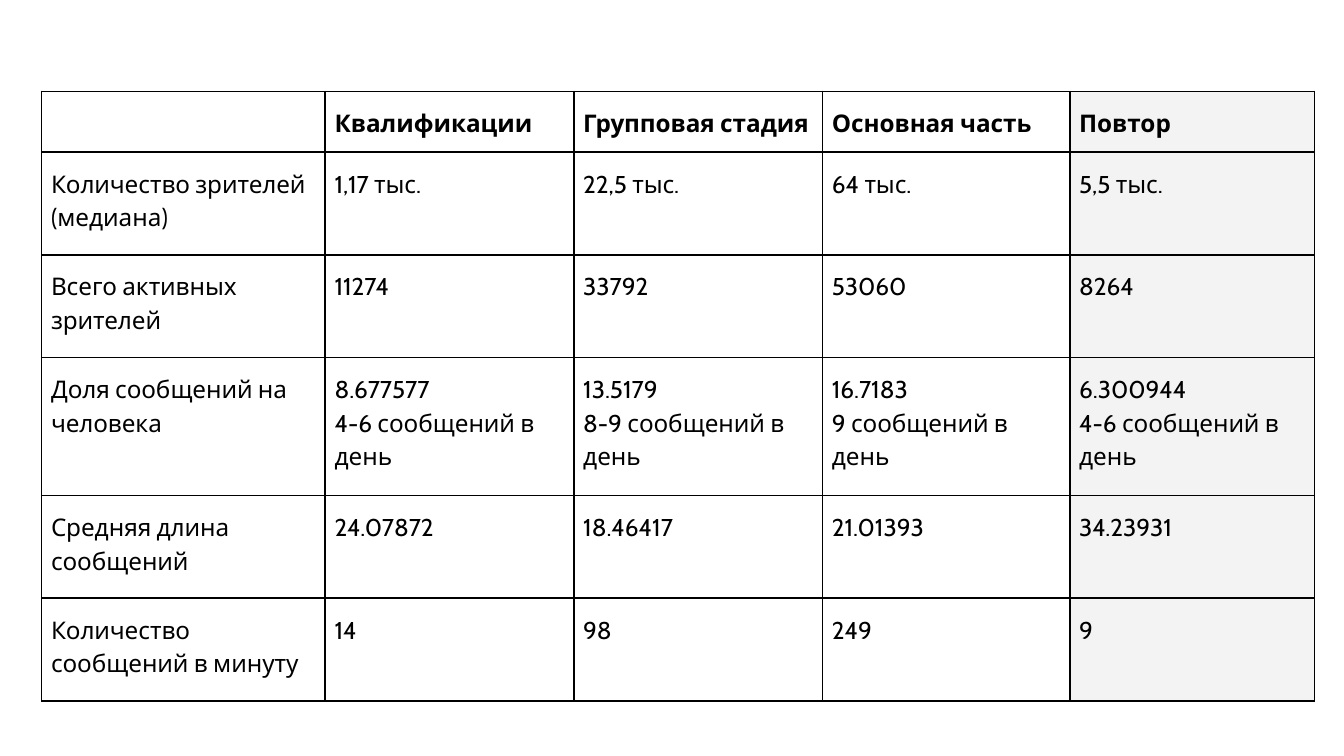
from lxml.etree import SubElement
from pptx import Presentation
from pptx.dml.color import RGBColor
from pptx.oxml.ns import qn
from pptx.util import Inches, Pt

# Content: one tuple per table row, a line break starts a new paragraph
ROWS = [
    ("", "Квалификации", "Групповая стадия", "Основная часть", "Повтор"),
    ("Количество зрителей (медиана)", "1,17 тыс.", "22,5 тыс.", "64 тыс.", "5,5 тыс."),
    ("Всего активных зрителей", "11274", "33792", "53060", "8264"),
    ("Доля сообщений на человека", "8.677577\n4-6 сообщений в день",
     "13.5179\n8-9 сообщений в день", "16.7183\n9 сообщений в день",
     "6.300944\n4-6 сообщений в день"),
    ("Средняя длина сообщений", "24.07872", "18.46417", "21.01393", "34.23931"),
    ("Количество сообщений в минуту", "14", "98", "249", "9"),
]
WIDTHS = [2.11, 1.85, 1.85, 1.84, 1.82]  # inches
HEIGHTS = [32.5, 55, 55, 74, 55, 55]  # points
LEFT, TOP = 0.31, 0.68
INK, GRAY = "000000", "F3F3F3"


def color(code):
    return RGBColor.from_string(code)


def write(cell, text, size=13, bold=False, ink=INK, font="Cabin"):
    cell.margin_left = cell.margin_right = Inches(0.07)
    cell.margin_top = cell.margin_bottom = Inches(0.1)
    frame = cell.text_frame
    for i, line in enumerate(text.split("\n")):
        para = frame.add_paragraph() if i else frame.paragraphs[0]
        para.line_spacing = 1.15
        if not line:
            # An empty cell keeps the text size, so its row stays low
            SubElement(para._p, qn("a:endParaRPr"), sz=str(size * 100))
            continue
        run = para.add_run()
        run.text = line
        run.font.size, run.font.bold, run.font.name = Pt(size), bold, font
        run.font.color.rgb = color(ink)


def border(cell, ink=INK, width=1):
    props = cell._tc.get_or_add_tcPr()
    for i, side in enumerate(("lnL", "lnR", "lnT", "lnB")):
        line = props.makeelement(qn("a:" + side), {"w": str(Pt(width))})
        fill = SubElement(line, qn("a:solidFill"))
        SubElement(fill, qn("a:srgbClr"), val=ink)
        props.insert(i, line)


# Wide slide, 16 to 9
deck = Presentation()
deck.slide_width = Inches(10)
deck.slide_height = deck.slide_width * 9 // 16
slide = deck.slides.add_slide(deck.slide_layouts[6])

# Table grid
table = slide.shapes.add_table(
    len(ROWS), len(WIDTHS), Inches(LEFT), Inches(TOP),
    Inches(sum(WIDTHS)), Pt(sum(HEIGHTS))).table
table.first_row = table.horz_banding = False
for col, width in zip(table.columns, WIDTHS):
    col.width = Inches(width)
for row, height in zip(table.rows, HEIGHTS):
    row.height = Pt(height)

# Cells: bold header row, gray last column
for r, texts in enumerate(ROWS):
    for c, text in enumerate(texts):
        cell = table.cell(r, c)
        write(cell, text, bold=r == 0)
        if c == len(WIDTHS) - 1:
            cell.fill.solid()
            cell.fill.fore_color.rgb = color(GRAY)
        else:
            cell.fill.background()
        border(cell)

deck.save("out.pptx")
